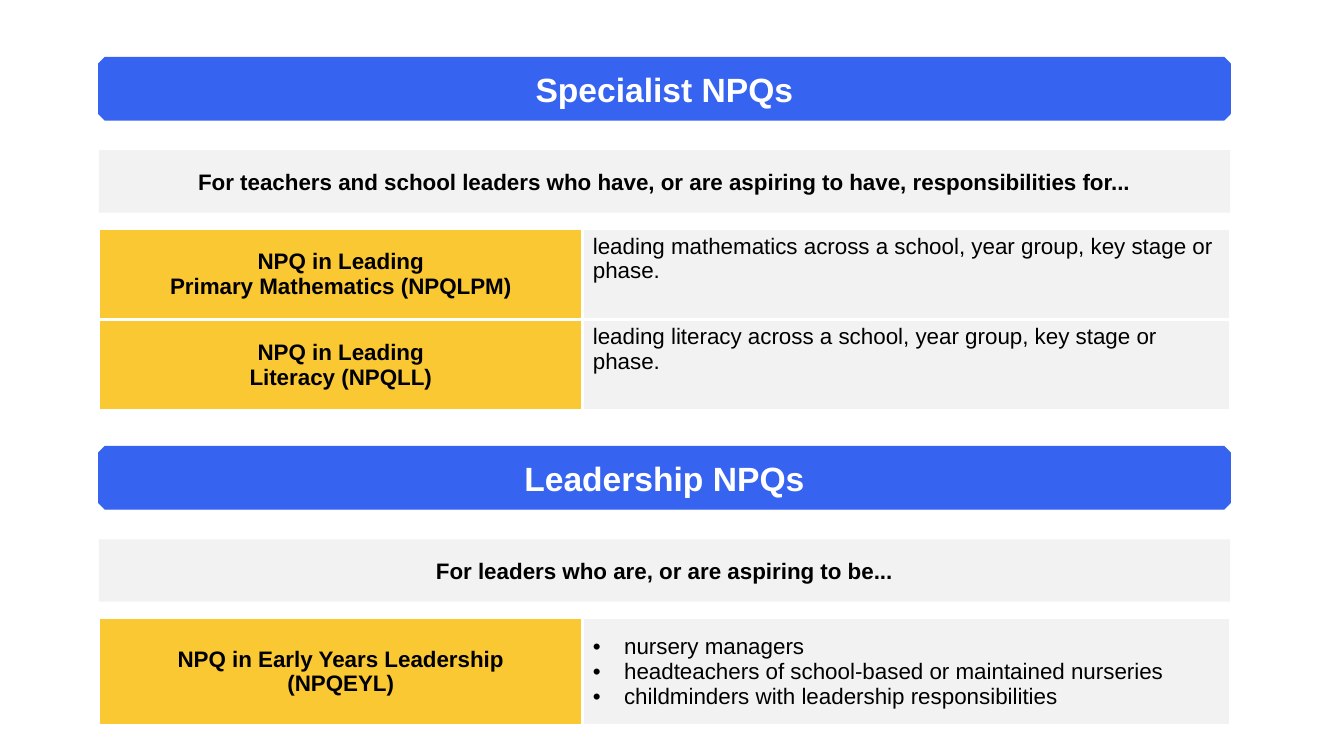
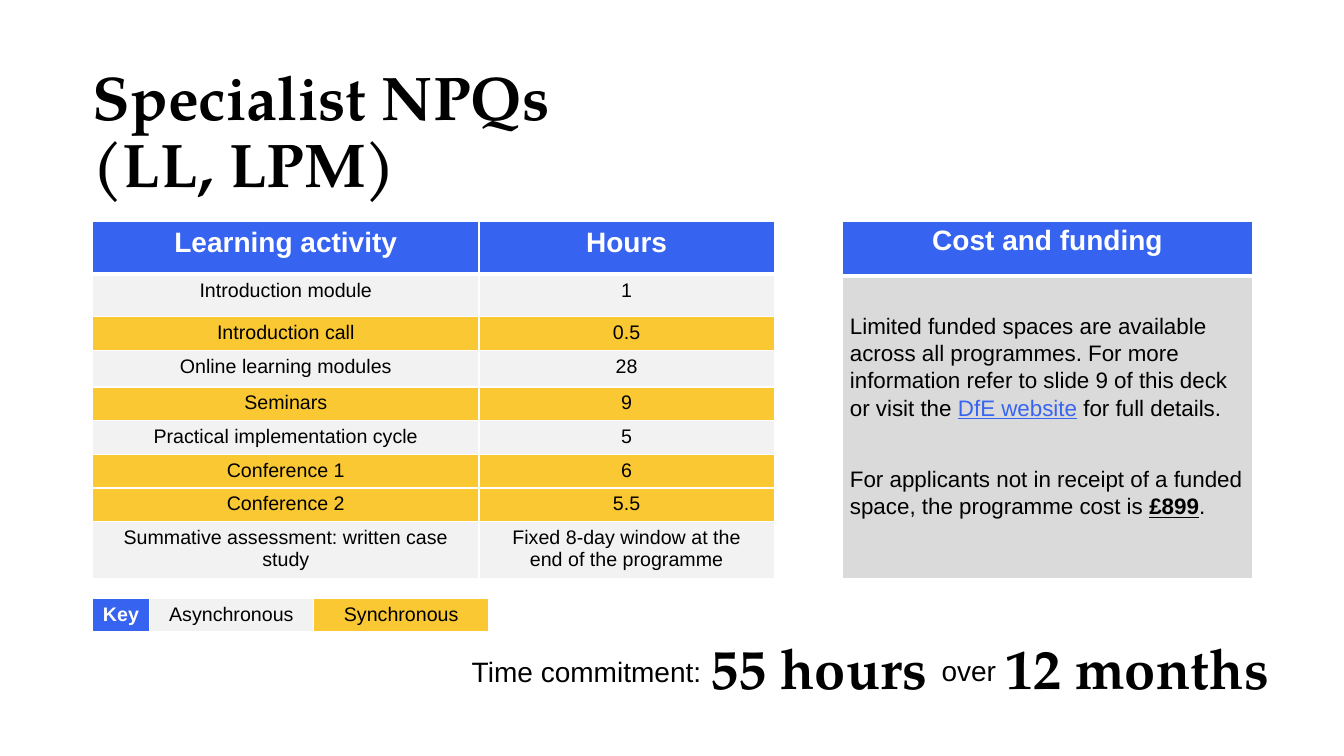
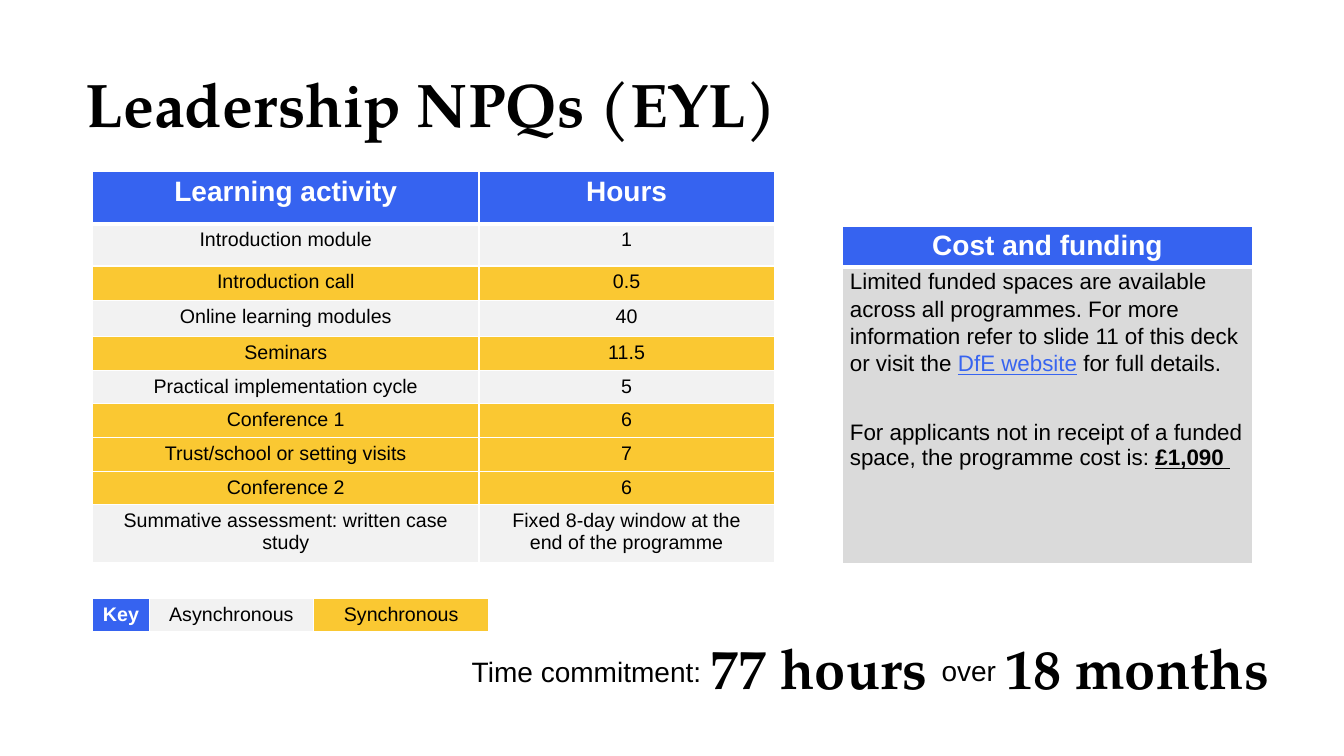
from lxml.etree import SubElement
from pptx import Presentation
from pptx.dml.color import RGBColor
from pptx.enum.shapes import MSO_SHAPE
from pptx.enum.text import MSO_ANCHOR, PP_ALIGN
from pptx.oxml.ns import qn
from pptx.util import Inches, Pt

BLUE, YELLOW, PALE, GREY = "3663F0", "FAC832", "F2F2F2", "DADADA"
WHITE, BLACK, LINK = "FFFFFF", "000000", "3764F0"
BODY_FONT, TITLE_FONT = "Arial", "TeX Gyre Pagella"
EDGES = {"lnL": 1, "lnR": 1, "lnT": 1, "lnB": 1}
HEADER_EDGES = {**EDGES, "lnB": 3}
THICK_EDGES = dict.fromkeys(EDGES, 2.25)

OVERVIEW = [
    {
        "top": 0.57,
        "heading": "Specialist NPQs",
        "audience": "For teachers and school leaders who have, or are aspiring to have, responsibilities for...",
        "row_height": 0.9,
        "rows": [
            ("NPQ in Leading\nPrimary Mathematics (NPQLPM)",
             ["leading mathematics across a school, year group, key stage or phase."]),
            ("NPQ in Leading\nLiteracy (NPQLL)",
             ["leading literacy across a school, year group, key stage or phase."]),
        ],
    },
    {
        "top": 4.43,
        "heading": "Leadership NPQs",
        "audience": "For leaders who are, or are aspiring to be...",
        "row_height": 1.07,
        "rows": [
            ("NPQ in Early Years Leadership\n(NPQEYL)",
             ["nursery managers",
              "headteachers of school-based or maintained nurseries",
              "childminders with leadership responsibilities"]),
        ],
    },
]

ASSESSMENT = ("Summative assessment: written case study",
              "Fixed 8-day window at the\nend of the programme", PALE)

PROGRAMMES = [
    {
        "title": ["Specialist NPQs", "(LL, LPM)"],
        "title_at": (0.92, 1.11, 11.04, 0.88),
        "table_top": 2.2,
        "activities": [
            ("Introduction module", "1", PALE),
            ("Introduction call", "0.5", YELLOW),
            ("Online learning modules", "28", PALE),
            ("Seminars", "9", YELLOW),
            ("Practical implementation cycle", "5", PALE),
            ("Conference 1", "6", YELLOW),
            ("Conference 2", "5.5", YELLOW),
            ASSESSMENT,
        ],
        "cost_top": 2.2,
        "cost_rows": [0.54, 3],
        "cost_inset": 0.35,
        "cost_spacings": [1.1, 1.1],
        "cost": [
            [("Limited funded spaces are available across all programmes. For more information refer to slide 9 of this deck or visit the ", ""),
             ("DfE website", "link"), (" for full details.", "")],
            [("For applicants not in receipt of a funded space, the programme cost is ", ""),
             ("£899", "price"), (".", "")],
        ],
        "hours": "55 hours",
        "months": "12 months",
    },
    {
        "title": ["Leadership NPQs (EYL)"],
        "title_at": (0.85, 0.52, 11.17, 0.88),
        "table_top": 1.7,
        "activities": [
            ("Introduction module", "1", PALE),
            ("Introduction call", "0.5", YELLOW),
            ("Online learning modules", "40", PALE),
            ("Seminars", "11.5", YELLOW),
            ("Practical implementation cycle", "5", PALE),
            ("Conference 1", "6", YELLOW),
            ("Trust/school or setting visits", "7", YELLOW),
            ("Conference 2", "6", YELLOW),
            ASSESSMENT,
        ],
        "cost_top": 2.25,
        "cost_rows": [0.4, 2.94],
        "cost_inset": 0,
        "cost_spacings": [1.1, 1],
        "cost": [
            [("Limited funded spaces are available across all programmes. For more information refer to slide 11 of this deck or visit the ", ""),
             ("DfE website", "link"), (" for full details.", "")],
            [("For applicants not in receipt of a funded space, the programme cost is: ", ""),
             ("£1,090 ", "price")],
        ],
        "hours": "77 hours",
        "months": "18 months",
    },
]

KEY = [("Key", BLUE), ("Asynchronous", PALE), ("Synchronous", YELLOW)]


def color(value):
    return RGBColor.from_string(value)


def add_bullet(para):
    properties = para._p.get_or_add_pPr()
    properties.set("marL", str(Inches(0.31)))
    properties.set("indent", str(-Inches(0.31)))
    SubElement(properties, qn("a:buFont")).set("typeface", BODY_FONT)
    SubElement(properties, qn("a:buChar")).set("char", "•")


def write(frame, lines, size, ink=BLACK, bold=False, font=BODY_FONT,
          align=PP_ALIGN.LEFT, spacing=None, after=None, bulleted=False):
    frame.word_wrap = True
    paras = []
    for index, line in enumerate(lines):
        para = frame.add_paragraph() if index else frame.paragraphs[0]
        if bulleted:
            add_bullet(para)
        para.alignment = align
        para.line_spacing = spacing
        para.space_after = after
        para.font.name, para.font.size = font, Pt(size)
        para.font.bold, para.font.color.rgb = bold, color(ink)
        if isinstance(line, str):
            para.text = line
        else:
            for text, role in line:
                span = para.add_run()
                span.text = text
                if role:
                    span.font.underline = True
                if role == "link":
                    span.font.color.rgb = color(LINK)
                if role == "price":
                    span.font.bold = True
        paras.append(para)
    return paras


def set_margins(holder, left, top, right, bottom):
    holder.margin_left, holder.margin_top = Inches(left), Inches(top)
    holder.margin_right, holder.margin_bottom = Inches(right), Inches(bottom)


def add_text(page, at, lines, size, **style):
    frame = page.shapes.add_textbox(*map(Inches, at)).text_frame
    if style.get("font") == TITLE_FONT:
        set_margins(frame, 0, 0, 0, 0)
        frame.vertical_anchor = MSO_ANCHOR.BOTTOM
    write(frame, lines, size, **style)


def add_grid(page, left, top, widths, heights):
    frame = page.shapes.add_table(len(heights), len(widths), Inches(left), Inches(top),
                                  Inches(sum(widths)), Inches(sum(heights)))
    table = frame.table
    table.first_row = table.horz_banding = False
    for column, width in zip(table.columns, widths):
        column.width = Inches(width)
    for row, height in zip(table.rows, heights):
        row.height = Inches(height)
    return table


def dress(cell, fill, edges=EDGES):
    properties = cell._tc.get_or_add_tcPr()
    for side, width in edges.items():
        edge = SubElement(properties, qn(f"a:{side}"), w=str(Pt(width)))
        SubElement(SubElement(edge, qn("a:solidFill")), qn("a:srgbClr")).set("val", WHITE)
    cell.fill.solid()
    cell.fill.fore_color.rgb = color(fill)


def add_band(page, kind, top, fill, text, size, ink):
    band = page.shapes.add_shape(kind, Inches(0.98), Inches(top), Inches(11.22), Inches(0.62))
    band.shadow.inherit = False
    band.fill.solid()
    band.fill.fore_color.rgb = color(fill)
    band.line.fill.background()
    band.text_frame.vertical_anchor = MSO_ANCHOR.MIDDLE
    write(band.text_frame, [text], size, ink=ink, bold=True, align=PP_ALIGN.CENTER)
    return band


def add_overview_block(page, block):
    top = block["top"]
    heading = add_band(page, MSO_SHAPE.SNIP_2_SAME_RECTANGLE, top, BLUE, block["heading"], 24, WHITE)
    heading.adjustments[0] = heading.adjustments[1] = 0.1
    heading.line.color.rgb = color(BLUE)
    heading.line.width = Pt(1)
    add_band(page, MSO_SHAPE.RECTANGLE, top + 0.92, PALE, block["audience"], 16, BLACK)
    table = add_grid(page, 0.98, top + 1.7, [4.8, 6.42], [block["row_height"]] * len(block["rows"]))
    for row, (name, roles) in enumerate(block["rows"]):
        name_cell, roles_cell = table.cell(row, 0), table.cell(row, 1)
        dress(name_cell, YELLOW, THICK_EDGES)
        dress(roles_cell, PALE, THICK_EDGES)
        name_cell.vertical_anchor = MSO_ANCHOR.MIDDLE
        write(name_cell.text_frame, [name], 16, bold=True, align=PP_ALIGN.CENTER)
        several = len(roles) > 1
        roles_cell.vertical_anchor = MSO_ANCHOR.MIDDLE if several else MSO_ANCHOR.TOP
        write(roles_cell.text_frame, roles, 16, bulleted=several)


def add_activities(page, top, activities):
    heights = [0.52, 0.42, 0.34, 0.36] + [0.33] * (len(activities) - 4) + [0.57]
    table = add_grid(page, 0.92, top, [3.83, 2.93], heights)
    for row, (activity, hours, fill) in enumerate([("Learning activity", "Hours", BLUE)] + activities):
        header = row == 0
        for column, text in enumerate((activity, hours)):
            cell = table.cell(row, column)
            dress(cell, fill, HEADER_EDGES if header else EDGES)
            write(cell.text_frame, [text], 20 if header else 14, ink=WHITE if header else BLACK,
                  bold=header, align=PP_ALIGN.CENTER)


def add_cost(page, programme):
    table = add_grid(page, 8.36, programme["cost_top"], [4.06], programme["cost_rows"])
    header, body = table.cell(0, 0), table.cell(1, 0)
    dress(header, BLUE, HEADER_EDGES)
    set_margins(header, 0.07, 0, 0.07, 0)
    write(header.text_frame, ["Cost and funding"], 20, ink=WHITE, bold=True,
          align=PP_ALIGN.CENTER, spacing=1.1, after=Pt(6))
    dress(body, GREY)
    set_margins(body, 0.07, programme["cost_inset"], 0.07, 0)
    paras = write(body.text_frame, programme["cost"], 16, after=Pt(6))
    for para, spacing in zip(paras, programme["cost_spacings"]):
        para.line_spacing = spacing
    paras[1].space_before = Pt(25.5)


def add_key(page):
    table = add_grid(page, 0.92, 5.94, [0.56, 1.63, 1.74], [0.33])
    for column, (text, fill) in enumerate(KEY):
        cell = table.cell(0, column)
        dress(cell, fill, HEADER_EDGES)
        label = fill == BLUE
        write(cell.text_frame, [text], 14, ink=WHITE if label else BLACK, bold=label,
              align=PP_ALIGN.CENTER)


def add_programme(page, programme):
    display = {"bold": True, "font": TITLE_FONT, "spacing": 0.9}
    add_text(page, programme["title_at"], programme["title"], 44, **display)
    add_activities(page, programme["table_top"], programme["activities"])
    add_cost(page, programme)
    add_key(page)
    add_text(page, (4.58, 6.44, 2.52, 0.44), ["Time commitment:"], 20)
    add_text(page, (7.05, 6.35, 2.2, 0.61), [programme["hours"]], 40, **display)
    add_text(page, (9.24, 6.43, 0.86, 0.44), ["over"], 20)
    add_text(page, (9.97, 6.35, 2.69, 0.61), [programme["months"]], 40, **display)


def main():
    deck = Presentation()
    deck.slide_width, deck.slide_height = Inches(13.33), Inches(7.5)
    blank = deck.slide_layouts[6]
    overview = deck.slides.add_slide(blank)
    for block in OVERVIEW:
        add_overview_block(overview, block)
    for programme in PROGRAMMES:
        add_programme(deck.slides.add_slide(blank), programme)
    deck.save("out.pptx")


if __name__ == "__main__":
    main()
